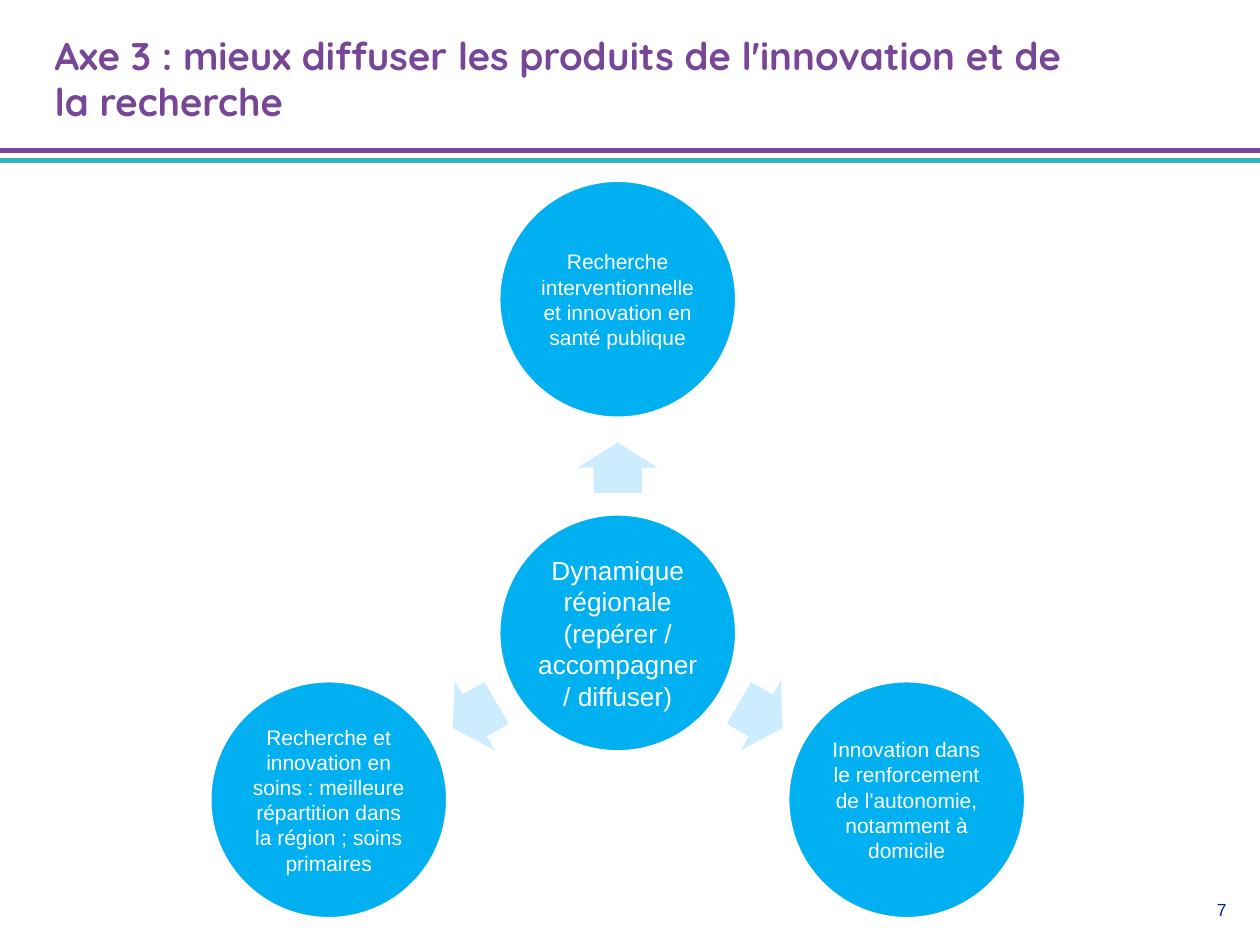
from math import cos, radians, sin

from pptx import Presentation
from pptx.dml.color import RGBColor
from pptx.enum.shapes import MSO_CONNECTOR as Conn, MSO_SHAPE as Kind
from pptx.enum.text import MSO_ANCHOR as Anchor, PP_ALIGN as Align
from pptx.oxml.ns import qn
from pptx.util import Pt

WIDTH, HEIGHT = 720, 540
PURPLE, TEAL, NAVY = "784696", "32B4BE", "002395"
BLUE, PALE, WHITE = "00B0F0", "CCECFF", "FFFFFF"
HUB = "Dynamique régionale (repérer / accompagner / diffuser)"
SPOKES = [  # clockwise from the top
    "Recherche interventionnelle et innovation en santé publique",
    "Innovation dans le renforcement de l'autonomie, notamment à domicile",
    "Recherche et innovation en soins : meilleure répartition dans "
    "la région ; soins primaires",
]


def rgb(code):
    return RGBColor.from_string(code)


def style(para, name, size, color, align, bold=False):
    para.alignment = align
    font = para.font
    font.name, font.size, font.bold = name, Pt(size), bold
    font.color.rgb = rgb(color)


def add_title(slide, box, text):
    title = slide.shapes.title
    title.left, title.top, title.width, title.height = map(Pt, box)
    frame = title.text_frame
    frame.text = text
    frame.word_wrap = True
    frame.vertical_anchor = Anchor.MIDDLE
    style(frame.paragraphs[0], "Quicksand", 22, PURPLE, Align.LEFT, True)


def add_rules(slide, top, gap):
    """Draw the two full-width lines under the title."""
    for row, color in enumerate((PURPLE, TEAL)):
        y = Pt(top + row * gap)
        rule = slide.shapes.add_connector(Conn.STRAIGHT, 0, y, Pt(WIDTH), y)
        rule.line.color.rgb = rgb(color)
        rule.line.width = Pt(3)
        props = rule._element.spPr
        props.append(props.makeelement(qn("a:effectLst"), {}))


def add_form(slide, kind, x, y, w, h, color):
    """Add a filled shape centred on x, y."""
    form = slide.shapes.add_shape(
        kind, Pt(x - w / 2), Pt(y - h / 2), Pt(w), Pt(h))
    form.shadow.inherit = False
    form.fill.solid()
    form.fill.fore_color.rgb = rgb(color)
    form.line.fill.background()
    return form


def add_disc(slide, x, y, size, text, points):
    disc = add_form(slide, Kind.OVAL, x, y, size, size, BLUE)
    disc.line.color.rgb = rgb(WHITE)
    disc.line.width = Pt(2)
    frame = disc.text_frame
    frame.text = text
    frame.word_wrap = True
    frame.vertical_anchor = Anchor.MIDDLE
    frame.margin_left = frame.margin_right = Pt(1.4)
    frame.margin_top = frame.margin_bottom = Pt(1.4)
    style(frame.paragraphs[0], "Arial", points, WHITE, Align.CENTER)


def add_wheel(slide, box):
    """Fit a hub with three spokes into the box."""
    left, top, width, height = box
    size = 136
    reach = (height - size) / 1.5
    x, y = left + width / 2, top + size / 2 + reach
    add_disc(slide, x, y, size, HUB, 15)
    for step, text in enumerate(SPOKES):
        turn = (270 + step * 360 / len(SPOKES)) % 360
        dx, dy = cos(radians(turn)), sin(radians(turn))
        mid = reach * 0.495
        arrow = add_form(slide, Kind.RIGHT_ARROW,
                         x + mid * dx, y + mid * dy, 28.8, 46, PALE)
        arrow.rotation = turn
        arrow.adjustments[0], arrow.adjustments[1] = 0.6, 0.5
        add_disc(slide, x + reach * dx, y + reach * dy, size, text, 12)


def add_number(slide, box, text):
    frame = slide.shapes.add_textbox(*map(Pt, box)).text_frame
    frame.text = text
    frame.word_wrap = True
    style(frame.paragraphs[0], "Arial", 10, NAVY, Align.RIGHT)


def main():
    deck = Presentation()
    deck.slide_width, deck.slide_height = Pt(WIDTH), Pt(HEIGHT)
    slide = deck.slides.add_slide(deck.slide_layouts[5])
    add_number(slide, (672, 510, 36, 36), "7")
    add_rules(slide, 86, 5.6)
    add_title(slide, (24, 17.5, 597, 54),
              "Axe 3 : mieux diffuser les produits de l'innovation "
              "et de la recherche")
    add_wheel(slide, (119.5, 103, 467, 422))
    deck.save("out.pptx")


if __name__ == "__main__":
    main()
